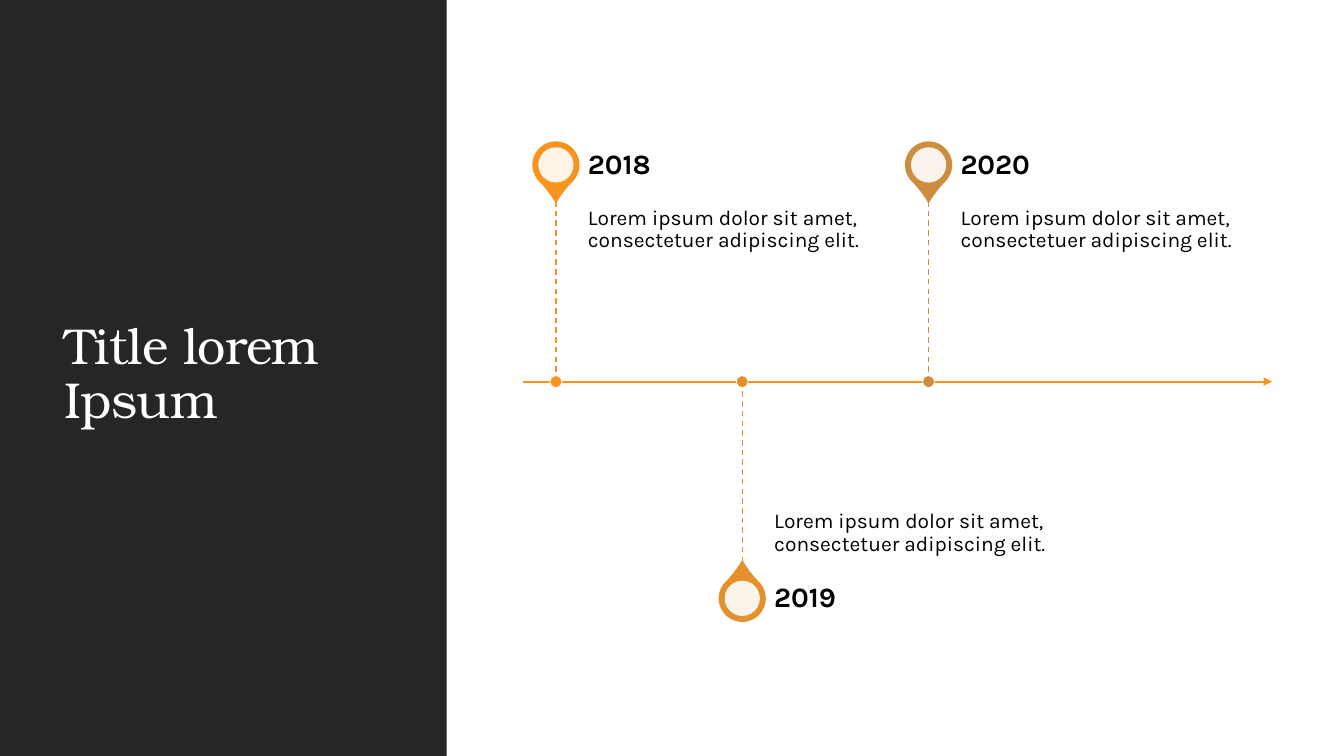
from lxml import etree
from pptx import Presentation, util as u
from pptx.dml.color import RGBColor
from pptx.enum import dml, shapes, text
from pptx.oxml import ns

Pt = u.Pt
COLORS = {
    "panel": "262626", "white": "FFFFFF", "ink": "000000", "axis": "F8931D",
    "2018": "F8931D", "2019": "E3902D", "2020": "CE8D3E",
}
FORMATS = {
    "title": {"name": "TeX Gyre Bonum", "size": Pt(36)},
    "year": {"name": "Karla", "size": Pt(20), "bold": True},
    "body": {"name": "Karla", "size": Pt(15)},
}
MIDDLE, TOP, BOTTOM = text.MSO_ANCHOR.MIDDLE, text.MSO_ANCHOR.TOP, text.MSO_ANCHOR.BOTTOM
AXIS_Y, FIRST_X, STEP_X = 272.6, 397.1, 133.1
PIN_REACH, STEM, PIN, WINDOW, DOT = 154.8, 131.8, 32.4, 25.2, 8.4
TEXT_GAP, TEXT_WIDTH, YEAR_HEIGHT = 22.8, 221.8, 46

deck = Presentation()
deck.slide_width, deck.slide_height = Pt(960), Pt(540)
slide = deck.slides.add_slide(deck.slide_layouts[6])


def add_filled(preset, left, top, width, height, fill, line=None, weight=0):
    part = slide.shapes.add_shape(preset, Pt(left), Pt(top), Pt(width), Pt(height))
    part.shadow.inherit = False
    part.fill.solid()
    part.fill.fore_color.rgb = RGBColor.from_string(COLORS[fill])
    if line:
        part.line.color.rgb = RGBColor.from_string(COLORS[line])
        part.line.width = Pt(weight)
    else:
        part.line.fill.background()
    return part


def add_words(words, box, style, color, anchor, insets):
    frame = slide.shapes.add_textbox(*map(Pt, box)).text_frame
    left, top, right, bottom = map(Pt, insets)
    layout = {"word_wrap": True, "vertical_anchor": anchor, "margin_left": left,
              "margin_top": top, "margin_right": right, "margin_bottom": bottom}
    for key, value in layout.items():
        setattr(frame, key, value)
    frame.paragraphs[0].line_spacing = 0.9
    run = frame.paragraphs[0].add_run()
    run.text = words
    for key, value in FORMATS[style].items():
        setattr(run.font, key, value)
    run.font.color.rgb = RGBColor.from_string(COLORS[color])
    return run


add_filled(shapes.MSO_SHAPE.RECTANGLE, 0, 0, 319, 540, "panel")
title = add_words("Title lorem Ipsum", (38.9, 41, 242.6, 454.3), "title", "white",
                  MIDDLE, (7.2, 3.6, 7.2, 3.6))
title.font._element.set("spc", "-50")

rules = [(373.7, AXIS_Y, 908.6, AXIS_Y, "axis", 1.5)]
milestones = []
for index, (year, side) in enumerate([("2018", -1), ("2019", 1), ("2020", -1)]):
    x = FIRST_X + index * STEP_X
    milestones.append((year, side, x))
    rules.append((x, AXIS_Y, x, AXIS_Y + side * STEM, year, 1))

for x1, y1, x2, y2, color, weight in rules:
    rule = slide.shapes.add_connector(shapes.MSO_CONNECTOR.STRAIGHT, Pt(x1), Pt(y1), Pt(x2), Pt(y2))
    rule.line.color.rgb = RGBColor.from_string(COLORS[color])
    rule.line.width = Pt(weight)
    if color == "axis":
        etree.SubElement(rule.line._get_or_add_ln(), ns.qn("a:tailEnd"), type="triangle")
    else:
        rule.line.dash_style = dml.MSO_LINE.DASH
    etree.SubElement(rule._element.spPr, ns.qn("a:effectLst"))

for year, side, x in milestones:
    pin_y = AXIS_Y + side * PIN_REACH
    pin = add_filled(shapes.MSO_SHAPE.TEAR, x - PIN / 2, pin_y - PIN / 2, PIN, PIN, year, year, 1.25)
    pin.adjustments[0] = 1.15
    pin.rotation = 135 if side < 0 else 315
    window = add_filled(shapes.MSO_SHAPE.OVAL, x - WINDOW / 2, pin_y - WINDOW / 2,
                        WINDOW, WINDOW, "white")
    tint = window.fill._xPr.find(ns.qn("a:solidFill"))[0]
    etree.SubElement(tint, ns.qn("a:alpha"), val="90000")
    add_filled(shapes.MSO_SHAPE.OVAL, x - DOT / 2, AXIS_Y - DOT / 2, DOT, DOT, year, "white", 0.5)

    text_x = x + TEXT_GAP
    add_words(year, (text_x, pin_y - YEAR_HEIGHT / 2, TEXT_WIDTH, YEAR_HEIGHT),
              "year", "ink", MIDDLE, (0, 0, 10, 0))
    above = side < 0
    add_words("Lorem ipsum dolor sit amet, consectetuer adipiscing elit.",
              (text_x, AXIS_Y - STEM if above else AXIS_Y, TEXT_WIDTH, STEM),
              "body", "ink", TOP if above else BOTTOM,
              (0, 7.2, 7.2, 11.5) if above else (0, 11.5, 0, 7.2))

deck.save("out.pptx")
